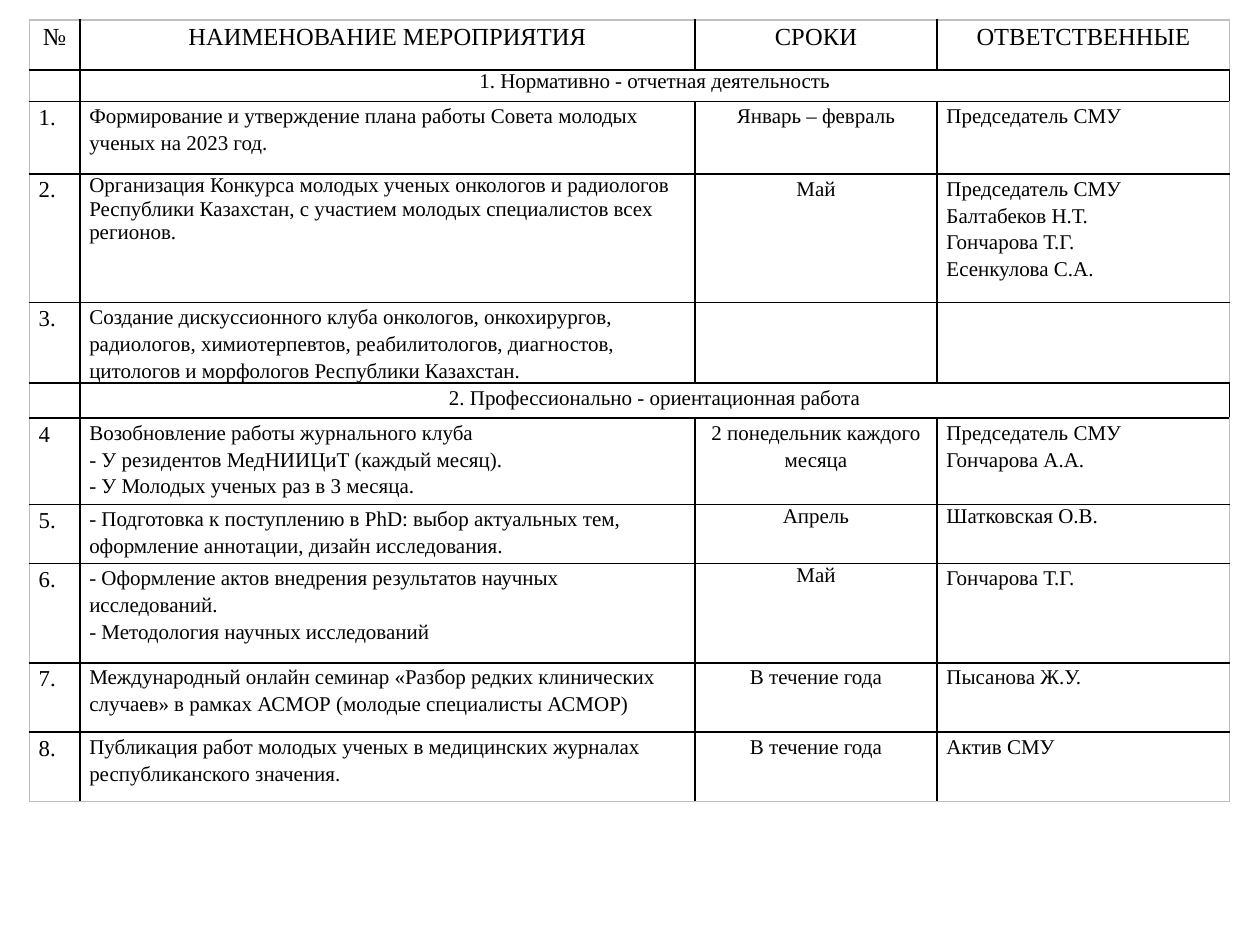
from dataclasses import dataclass

from lxml.etree import SubElement
from pptx import Presentation
from pptx.dml.color import RGBColor
from pptx.enum.text import PP_ALIGN
from pptx.oxml.ns import qn
from pptx.util import Cm, Pt


@dataclass(frozen=True)
class Theme:
    """Hold the font, type sizes and colours."""
    font: str = "Times New Roman"
    head: int = 14
    mark: int = 13
    body: int = 12
    ink: str = "000000"
    edge: str = "BFBFBF"
    rule: float = 1


THEME = Theme()
COLS = [1.02, 12.4, 4.88, 5.9]
ROWS = [
    (1.01, ["№", "НАИМЕНОВАНИЕ МЕРОПРИЯТИЯ", "СРОКИ", "ОТВЕТСТВЕННЫЕ"]),
    (0.64, ["", "1. Нормативно - отчетная деятельность"]),
    (1.46, ["1.", "Формирование и утверждение плана работы Совета молодых ученых на 2023 год.",
            "Январь – февраль", "Председатель СМУ"]),
    (2.59, ["2.", "Организация Конкурса молодых ученых онкологов и радиологов Республики "
            "Казахстан, с участием молодых специалистов всех регионов.",
            "Май", "Председатель СМУ\nБалтабеков Н.Т.\nГончарова Т.Г.\nЕсенкулова С.А."]),
    (1.62, ["3.", "Создание дискуссионного клуба онкологов, онкохирургов, радиологов, "
            "химиотерпевтов, реабилитологов, диагностов, цитологов и морфологов "
            "Республики Казахстан.", "", ""]),
    (0.71, ["", "2. Профессионально - ориентационная работа"]),
    (1.74, ["4", "Возобновление работы журнального клуба\n"
            "- У резидентов МедНИИЦиТ (каждый месяц).\n- У Молодых ученых раз в 3 месяца.",
            "2 понедельник каждого месяца", "Председатель СМУ\nГончарова А.А."]),
    (1.19, ["5.", "- Подготовка к поступлению в PhD: выбор актуальных тем, "
            "оформление аннотации, дизайн исследования.", "Апрель", "Шатковская О.В."]),
    (2, ["6.", "- Оформление актов внедрения результатов научных исследований.\n"
         "- Методология научных исследований", "Май", "Гончарова Т.Г."]),
    (1.4, ["7.", "Международный онлайн семинар «Разбор редких клинических случаев» "
           "в рамках АСМОР (молодые специалисты АСМОР)", "В течение года", "Пысанова Ж.У."]),
    (1.4, ["8.", "Публикация работ молодых ученых в медицинских журналах "
           "республиканского значения.", "В течение года", "Актив СМУ"]),
]
TIGHT = {(1, 1), (3, 1), (7, 2), (7, 3), (8, 2)}


def write(frame, text, size=THEME.body, center=False, gap=1.15):
    """Fill a text frame, one paragraph for each line of text."""
    for n, line in enumerate(text.split("\n")):
        para = frame.add_paragraph() if n else frame.paragraphs[0]
        para.alignment = PP_ALIGN.CENTER if center else PP_ALIGN.LEFT
        para.line_spacing = gap
        if not line:
            SubElement(para._p, qn("a:endParaRPr"), sz=str(size * 100))
            continue
        run = para.add_run()
        run.text = line
        run.font.name = THEME.font
        run.font.size = Pt(size)
        run.font.color.rgb = RGBColor.from_string(THEME.ink)


def border(cell, outer):
    """Rule all four sides of a cell, with the outer ones in the edge colour."""
    props = cell._tc.get_or_add_tcPr()
    for n, (side, out) in enumerate(zip("LRTB", outer)):
        line = SubElement(props, qn(f"a:ln{side}"), w=str(Pt(THEME.rule)))
        fill = SubElement(line, qn("a:solidFill"))
        SubElement(fill, qn("a:srgbClr"), val=THEME.edge if out else THEME.ink)
        props.insert(n, line)


def plan(slide, left, top, width, height):
    """Place the table of events in the given box, in centimetres."""
    grid = slide.shapes.add_table(
        len(ROWS), len(COLS), Cm(left), Cm(top), Cm(width), Cm(height)).table
    grid.first_row = grid.horz_banding = False
    for col, part in zip(grid.columns, COLS):
        col.width = Cm(width * part / sum(COLS))
    total = sum(tall for tall, _ in ROWS)
    last, end = len(ROWS) - 1, len(COLS) - 1
    for r, (tall, texts) in enumerate(ROWS):
        grid.rows[r].height = Cm(height * tall / total)
        band = len(texts) == 2
        if band:
            grid.cell(r, 1).merge(grid.cell(r, end))
        for c in range(len(COLS)):
            cell = grid.cell(r, c)
            cell.margin_left = cell.margin_right = Cm(0.19)
            cell.margin_top = cell.margin_bottom = 0
            cell.fill.background()
            border(cell, (c == 0, c == end, r == 0, r == last))
            if c < len(texts):
                size = THEME.head if r == 0 else THEME.body if c else THEME.mark
                write(cell.text_frame, texts[c], size=size if texts[c] else THEME.body,
                      center=r == 0 or c == 2 or band,
                      gap=1.0 if (r, c) in TIGHT else 1.15)


def main():
    """Build the slide and save it."""
    deck = Presentation()
    deck.slide_width, deck.slide_height = Cm(25.4), Cm(19.05)
    slide = deck.slides.add_slide(deck.slide_layouts[6])
    plan(slide, 0.59, 0.4, sum(COLS), sum(tall for tall, _ in ROWS))
    deck.save("out.pptx")


if __name__ == "__main__":
    main()
